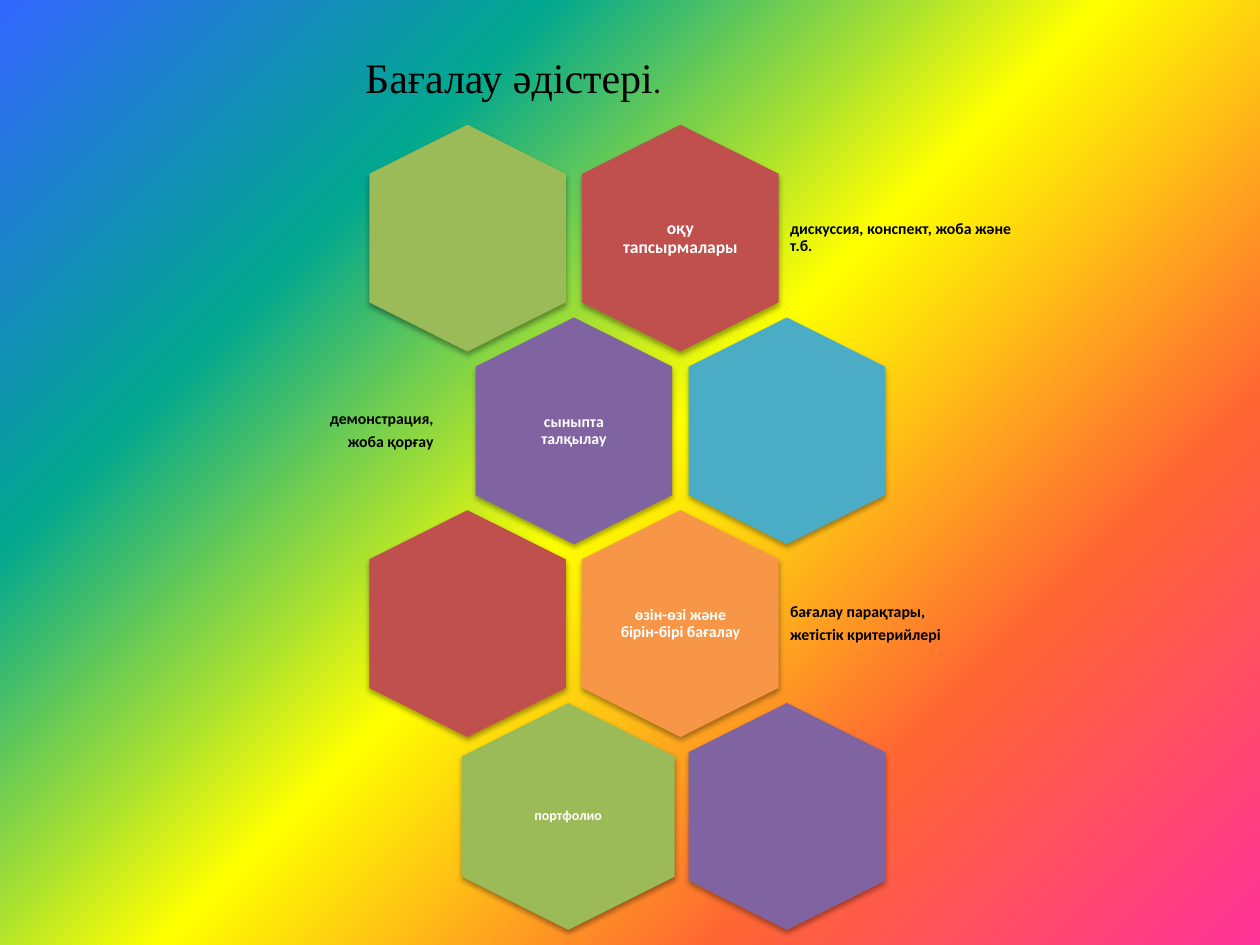
import lxml.etree
import pptx
import pptx.dml.color
import pptx.enum.shapes
import pptx.enum.text
import pptx.oxml
import pptx.oxml.ns
import pptx.util

Inches = pptx.util.Inches
Pt = pptx.util.Pt
RGBColor = pptx.dml.color.RGBColor
PP_ALIGN = pptx.enum.text.PP_ALIGN
qn = pptx.oxml.ns.qn

BLACK = RGBColor(0x00, 0x00, 0x00)
WHITE = RGBColor(0xFF, 0xFF, 0xFF)
RED = RGBColor(0xC0, 0x50, 0x4D)
GREEN = RGBColor(0x9B, 0xBB, 0x59)
PURPLE = RGBColor(0x80, 0x64, 0xA2)
BLUE = RGBColor(0x4B, 0xAC, 0xC6)
ORANGE = RGBColor(0xF7, 0x96, 0x46)
RAINBOW = [
    RGBColor(0x33, 0x66, 0xFF),
    RGBColor(0x01, 0xA7, 0x8F),
    RGBColor(0xFF, 0xFF, 0x00),
    RGBColor(0xFF, 0x66, 0x33),
    RGBColor(0xFF, 0x33, 0x99),
]

LEFT_X, TOP_Y = 3.71, 1.89
COL_STEP, ROW_STEP = 1.69, 1.53
HEX_LENGTH, HEX_WIDTH = 1.8, 1.56

# (row, column, fill, label, font size)
HEXAGONS = [
    (0, 1, RED, "оқу тапсырмалары", 10),
    (0, 0, GREEN, "", 0),
    (1, 0.5, PURPLE, "сыныпта талқылау", 9),
    (1, 1.5, BLUE, "", 0),
    (2, 1, ORANGE, "өзін-өзі және бірін-бірі бағалау", 9),
    (2, 0, RED, "", 0),
    (3, 1.5, PURPLE, "", 0),
]
CAPTIONS = [
    (0, 6.23, 2.01, PP_ALIGN.LEFT, ["дискуссия, конспект, жоба және т.б."]),
    (1, 1.54, 1.94, PP_ALIGN.RIGHT, ["демонстрация,", "жоба қорғау"]),
    (2, 6.23, 2.01, PP_ALIGN.LEFT, ["бағалау парақтары,", "жетістік критерийлері"]),
]


def set_background(s):
    """Fill the slide with a diagonal rainbow gradient."""
    fill = s.background.fill
    fill.gradient()
    fill.gradient_angle = 315
    stops = next(s.element.iter(qn("a:gsLst")))
    for stop in list(stops):
        stops.remove(stop)
    for i, color in enumerate(RAINBOW):
        stop = lxml.etree.SubElement(stops, qn("a:gs"), pos=str(i * 25000))
        lxml.etree.SubElement(stop, qn("a:srgbClr"), val=str(color))


def add_shadow(sp):
    """Give a shape a soft shadow that falls straight down."""
    sp.shadow.inherit = False
    effects = next(sp.element.iter(qn("a:effectLst")))
    effects.append(pptx.oxml.parse_xml(
        f'<a:outerShdw {pptx.oxml.ns.nsdecls("a")} blurRad="{Pt(3.1)}" dist="{Pt(1.8)}" '
        'dir="5400000" rotWithShape="0"><a:srgbClr val="000000">'
        '<a:alpha val="35000"/></a:srgbClr></a:outerShdw>'))


def add_text(s, x, y, w, h, lines, size, color, align):
    """Add a bold, vertically centred text box."""
    tf = s.shapes.add_textbox(Inches(x), Inches(y), Inches(w), Inches(h)).text_frame
    tf.word_wrap = True
    tf.vertical_anchor = pptx.enum.text.MSO_ANCHOR.MIDDLE
    tf.margin_left = tf.margin_right = tf.margin_top = tf.margin_bottom = Inches(0.04)
    tf.text = "\n".join(lines)
    for p in tf.paragraphs:
        p.alignment = align
        p.line_spacing = 0.9
        p.space_after = Pt(0.35 * size)
        p.font.name = "Calibri"
        p.font.size = Pt(size)
        p.font.bold = True
        p.font.color.rgb = color


def add_hexagon(s, cx, cy, fill, label, size, width=HEX_WIDTH):
    """Add an upright hexagon around a centre, with its label if any."""
    sp = s.shapes.add_shape(
        pptx.enum.shapes.MSO_SHAPE.HEXAGON,
        Inches(cx - HEX_LENGTH / 2), Inches(cy - width / 2), Inches(HEX_LENGTH), Inches(width))
    sp.rotation = 90
    sp.fill.solid()
    sp.fill.fore_color.rgb = fill
    sp.line.fill.background()
    add_shadow(sp)
    if label:
        add_text(s, cx - 0.54, cy - 0.62, 1.08, 1.24, [label], size, WHITE, PP_ALIGN.CENTER)


def add_title(s):
    """Add the slide heading."""
    tf = s.shapes.add_textbox(Inches(2.8), Inches(0.36), Inches(2.63), Inches(0.5)).text_frame
    tf.word_wrap = False
    tf.auto_size = pptx.enum.text.MSO_AUTO_SIZE.SHAPE_TO_FIT_TEXT
    for text, font, size in [("Бағалау әдістері", "Times New Roman", 24), (".", "Calibri", 18)]:
        r = tf.paragraphs[0].add_run()
        r.text = text
        r.font.name = font
        r.font.size = Pt(size)
        r.font.color.rgb = BLACK


def main():
    """Build the slide and save it."""
    prs = pptx.Presentation()
    prs.slide_width, prs.slide_height = Inches(10), Inches(7.5)
    s = prs.slides.add_slide(prs.slide_layouts[6])
    set_background(s)
    add_title(s)
    for row, col, fill, label, size in HEXAGONS:
        add_hexagon(s, LEFT_X + col * COL_STEP, TOP_Y + row * ROW_STEP, fill, label, size)
    add_hexagon(s, 4.51, TOP_Y + 3 * ROW_STEP, GREEN, "портфолио", 8, width=1.69)
    for row, x, w, align, lines in CAPTIONS:
        add_text(s, x, TOP_Y + row * ROW_STEP - 0.54, w, 1.08, lines, 9, BLACK, align)
    prs.save("out.pptx")


if __name__ == "__main__":
    main()
